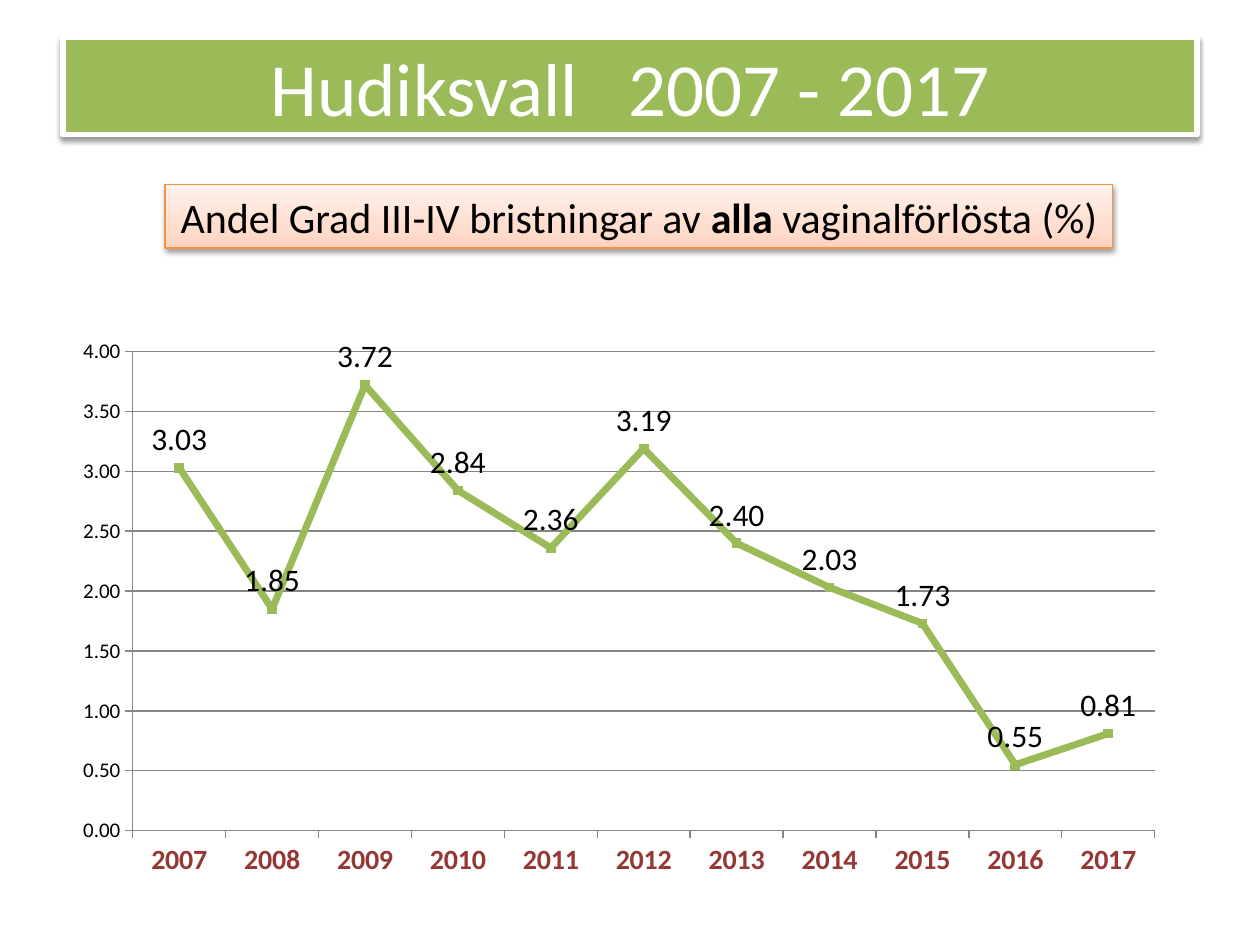
"""Build a slide with a line chart of severe tears in Hudiksvall."""
from lxml import etree
from pptx import Presentation
from pptx.chart.data import CategoryChartData
from pptx.dml.color import RGBColor
from pptx.enum.chart import XL_CHART_TYPE, XL_LABEL_POSITION, XL_MARKER_STYLE, XL_TICK_MARK
from pptx.enum.shapes import MSO_SHAPE
from pptx.enum.text import MSO_ANCHOR, PP_ALIGN
from pptx.oxml import parse_xml
from pptx.oxml.ns import qn
from pptx.util import Cm, Pt

RECTANGLE = MSO_SHAPE.RECTANGLE
LINE_CHART = XL_CHART_TYPE.LINE_MARKERS_STACKED
ABOVE = XL_LABEL_POSITION.ABOVE
SQUARE = XL_MARKER_STYLE.SQUARE
OUTSIDE = XL_TICK_MARK.OUTSIDE
MIDDLE = MSO_ANCHOR.MIDDLE
CENTER = PP_ALIGN.CENTER

WHITE = RGBColor(0xFF, 0xFF, 0xFF)
BLACK = RGBColor(0x00, 0x00, 0x00)
GREEN = RGBColor(0x9B, 0xBB, 0x59)
ORANGE = RGBColor(0xF6, 0x92, 0x40)
DARK_RED = RGBColor(0x95, 0x37, 0x35)
GRAY = RGBColor(0x86, 0x86, 0x86)
PEACH_STOPS = (
    (0, RGBColor(0xFF, 0xD2, 0xBD)),
    (35, RGBColor(0xFF, 0xDE, 0xD0)),
    (100, RGBColor(0xFF, 0xF2, 0xED)),
)
FONT = "Calibri"
DRAWING = "http://schemas.openxmlformats.org/drawingml/2006/main"

YEARS = [str(year) for year in range(2007, 2018)]
SHARES = [3.03, 1.85, 3.72, 2.84, 2.36, 3.19, 2.40, 2.03, 1.73, 0.55, 0.81]
PLOT_AREA = {"x": 0.053, "y": 0.123, "w": 0.928, "h": 0.804}


def set_font(font, size, color, bold=False):
    """Give a font the slide's typeface and the given format."""
    font.name = FONT
    font.size = Pt(size)
    font.bold = bold
    font.color.rgb = color


def add_text(paragraph, text, size=24, color=BLACK, bold=False, spacing=0):
    """Add a run of text; spacing widens each character, in points."""
    run = paragraph.add_run()
    run.text = text
    set_font(run.font, size, color, bold)
    if spacing:
        run.font._element.set("spc", str(round(spacing * 100)))


class SlideBuilder:
    """Hold the style and the current slide."""

    def __init__(self, presentation):
        """Start a blank slide."""
        self.slide = presentation.slides.add_slide(presentation.slide_layouts[6])

    def add_shadow(self, shape):
        """Give a shape a soft shadow below it."""
        shape.shadow.inherit = False
        effects = shape._element.spPr.find(qn("a:effectLst"))
        effects.append(parse_xml(
            f'<a:outerShdw xmlns:a="{DRAWING}" blurRad="{Pt(3.1)}" dist="{Pt(1.6)}" '
            'dir="5400000" rotWithShape="0"><a:srgbClr val="000000">'
            '<a:alpha val="38000"/></a:srgbClr></a:outerShdw>'))

    def add_gradient(self, shape, stops):
        """Fill a shape with a gradient that runs upwards."""
        shape.fill.gradient()
        shape.fill.gradient_angle = 90
        stop_list = shape._element.spPr.find(qn("a:gradFill")).find(qn("a:gsLst"))
        for stop in list(stop_list):
            stop_list.remove(stop)
        for position, color in stops:
            stop = etree.SubElement(stop_list, qn("a:gs"), pos=str(position * 1000))
            etree.SubElement(stop, qn("a:srgbClr"), val=str(color))

    def add_banner(self, left, top, width, height, line, line_width, fill=None, stops=None, wrap=True):
        """Add a shadowed rectangle and return its centred paragraph."""
        shape = self.slide.shapes.add_shape(RECTANGLE, Cm(left), Cm(top), Cm(width), Cm(height))
        if stops:
            self.add_gradient(shape, stops)
        else:
            shape.fill.solid()
            shape.fill.fore_color.rgb = fill
        shape.line.color.rgb = line
        shape.line.width = Pt(line_width)
        self.add_shadow(shape)
        shape.text_frame.word_wrap = wrap
        shape.text_frame.vertical_anchor = MIDDLE
        paragraph = shape.text_frame.paragraphs[0]
        paragraph.alignment = CENTER
        return paragraph

    def style_axis(self, axis, size, color, bold=False):
        """Format an axis line, its ticks and its labels."""
        axis.major_tick_mark = OUTSIDE
        axis.format.line.color.rgb = GRAY
        axis.format.line.width = Pt(0.75)
        set_font(axis.tick_labels.font, size, color, bold)

    def place_plot(self, chart):
        """Fix the inner plot area inside the chart."""
        plot_area = chart._chartSpace.chart.plotArea
        for old_layout in plot_area.findall(qn("c:layout")):
            plot_area.remove(old_layout)
        layout = etree.Element(qn("c:layout"))
        manual = etree.SubElement(layout, qn("c:manualLayout"))
        etree.SubElement(manual, qn("c:layoutTarget"), val="inner")
        for side in "xy":
            etree.SubElement(manual, qn(f"c:{side}Mode"), val="edge")
        for side, share in PLOT_AREA.items():
            etree.SubElement(manual, qn(f"c:{side}"), val=str(share))
        plot_area.insert(0, layout)

    def add_line_chart(self, left, top, width, height, categories, values):
        """Add a labelled line chart with one series."""
        data = CategoryChartData(number_format="0.00")
        data.categories = categories
        data.add_series("Series 1", values)
        chart = self.slide.shapes.add_chart(
            LINE_CHART, Cm(left), Cm(top), Cm(width), Cm(height), data).chart
        chart.has_legend = False
        chart.has_title = False
        set_font(chart.font, 18, BLACK)
        self.place_plot(chart)

        self.style_axis(chart.category_axis, 16, DARK_RED, bold=True)
        value_axis = chart.value_axis
        self.style_axis(value_axis, 12, BLACK)
        value_axis.minimum_scale, value_axis.maximum_scale = 0, 4
        value_axis.major_unit = 0.5
        value_axis.tick_labels.number_format = "0.00"
        value_axis.tick_labels.number_format_is_linked = False
        value_axis.major_gridlines.format.line.color.rgb = GRAY
        value_axis.major_gridlines.format.line.width = Pt(0.75)

        plot = chart.plots[0]
        plot.vary_by_categories = False
        series = plot.series[0]
        series.smooth = False
        series.format.line.color.rgb = GREEN
        series.format.line.width = Pt(4)
        series.marker.style = SQUARE
        series.marker.size = 5
        series.marker.format.fill.solid()
        series.marker.format.fill.fore_color.rgb = GREEN
        series.marker.format.line.color.rgb = GREEN
        labels = series.data_labels
        labels.show_value = True
        labels.position = ABOVE
        labels.number_format = "0.00"
        labels.number_format_is_linked = False
        set_font(labels.font, 18, BLACK)


def main():
    """Build and save the presentation."""
    presentation = Presentation()
    presentation.slide_width, presentation.slide_height = Cm(25.4), Cm(19.05)
    builder = SlideBuilder(presentation)

    title = builder.add_banner(1.27, 0.76, 22.86, 1.96, WHITE, 3, fill=GREEN)
    add_text(title, "Hudiksvall", size=42.9, color=WHITE)
    add_text(title, " ", size=42.9, color=WHITE, spacing=19.4)
    add_text(title, "2007 - 2017", size=42.9, color=WHITE)

    subtitle = builder.add_banner(3.33, 3.72, 19.1, 1.28, ORANGE, 0.75, stops=PEACH_STOPS, wrap=False)
    add_text(subtitle, "Andel Grad III-IV bristningar av ")
    add_text(subtitle, "alla", bold=True)
    add_text(subtitle, " vaginalförlösta (%)")

    builder.add_line_chart(1.5, 5.61, 22.2, 12.07, YEARS, SHARES)
    presentation.save("out.pptx")


if __name__ == "__main__":
    main()
